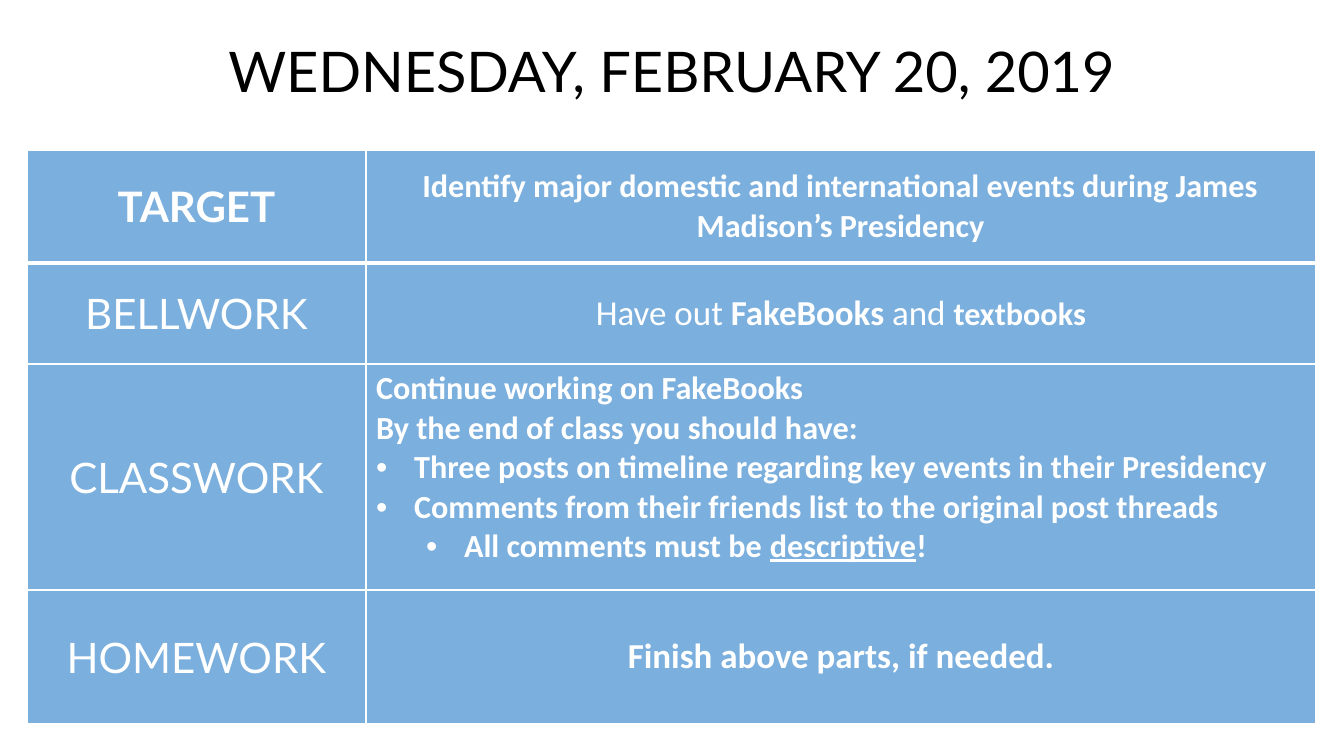
"""Build a daily class agenda slide with a title and a four-row table."""
from lxml.etree import SubElement
from pptx import Presentation
from pptx.dml.color import RGBColor
from pptx.enum.text import MSO_ANCHOR, MSO_AUTO_SIZE, PP_ALIGN
from pptx.oxml.ns import qn
from pptx.util import Pt

HEADING = "WEDNESDAY, FEBRUARY 20, 2019"
BOLD = {"bold": True}
SMALL = {"size": 23, "bold": True}
AGENDA = [
    ("TARGET", 113, [
        [("Identify major domestic and international events during James Madison’s Presidency", SMALL)]]),
    ("BELLWORK", 101, [
        [("Have out ", {}), ("FakeBooks", BOLD), (" and ", {}), ("textbooks", SMALL)]]),
    ("CLASSWORK", 226, [
        [("Continue working on FakeBooks", SMALL)],
        [("By the end of class you should have:", SMALL)],
        [("Three posts on timeline regarding key events in their Presidency", SMALL)],
        [("Comments from their friends list to the original post threads", SMALL)],
        [("All comments must be ", SMALL), ("descriptive", {**SMALL, "underline": True}), ("!", SMALL)]]),
    ("HOMEWORK", 134, [[("Finish above parts, if needed.", BOLD)]]),
]
CLASSWORK_LEVELS = [None, None, 0, 0, 1]
COLUMNS = [339, 950]
LEFT, HEADING_TOP, AGENDA_TOP, HEADING_HEIGHT = 27, 20, 150, 101
HANG, LEVEL_STEP = 38, 50
WHITE, BLACK, BLUE = "FFFFFF", "000000", "5B9BD5"


def px(length):
    return round(length * 914400 / 100.8)


def rgb(color):
    return RGBColor.from_string(color)


def add_text(paragraph, text, font="Calibri", size=25, color=WHITE, bold=False, underline=False):
    run = paragraph.add_run()
    run.text = text
    run.font.name, run.font.size = font, Pt(size)
    run.font.bold, run.font.underline = bold, underline
    run.font.color.rgb = rgb(color)


def fill_clear(owner, color, opacity):
    owner.fill.solid()
    owner.fill.fore_color.rgb = rgb(color)
    properties = owner._tc.tcPr if hasattr(owner, "_tc") else owner._element.spPr
    tint = properties.find(qn("a:solidFill")).find(qn("a:srgbClr"))
    SubElement(tint, qn("a:alpha"), val=str(opacity * 1000))


def add_borders(cell, top, bottom):
    properties = cell._tc.get_or_add_tcPr()
    for side, width in (("L", 1), ("R", 1), ("T", top), ("B", bottom)):
        border = SubElement(properties, qn(f"a:ln{side}"), w=str(Pt(width)))
        SubElement(SubElement(border, qn("a:solidFill")), qn("a:srgbClr"), val=WHITE)


def add_bullet(paragraph, level):
    properties = paragraph._p.get_or_add_pPr()
    properties.set("marL", str(px(HANG + level * LEVEL_STEP)))
    properties.set("indent", str(-px(HANG)))
    SubElement(properties, qn("a:buFont"), typeface="Arial")
    SubElement(properties, qn("a:buChar"), char="•")
    paragraph.level = level


def add_heading(slide):
    heading = slide.shapes.title
    heading.left, heading.top = px(LEFT), px(HEADING_TOP)
    heading.width, heading.height = px(sum(COLUMNS)), px(HEADING_HEIGHT)
    fill_clear(heading, WHITE, 65)
    frame = heading.text_frame
    frame.auto_size, frame.word_wrap = MSO_AUTO_SIZE.NONE, True
    frame.vertical_anchor = MSO_ANCHOR.MIDDLE
    frame.paragraphs[0].alignment = PP_ALIGN.CENTER
    add_text(frame.paragraphs[0], HEADING, font="Lato", size=40, color=BLACK)


def fill_cell(cell, row, paragraphs, levels=None):
    add_borders(cell, 3 if row == 1 else 1, 3 if row == 0 else 1)
    fill_clear(cell, BLUE, 80)
    cell.vertical_anchor = MSO_ANCHOR.TOP if levels else MSO_ANCHOR.MIDDLE
    for index, runs in enumerate(paragraphs):
        frame = cell.text_frame
        paragraph = frame.add_paragraph() if index else frame.paragraphs[0]
        paragraph.alignment = PP_ALIGN.LEFT if levels else PP_ALIGN.CENTER
        if levels and levels[index] is not None:
            add_bullet(paragraph, levels[index])
        for text, style in runs:
            add_text(paragraph, text, **style)


def add_agenda(slide):
    height = sum(row_height for _, row_height, _ in AGENDA)
    agenda = slide.shapes.add_table(
        len(AGENDA), len(COLUMNS), px(LEFT), px(AGENDA_TOP), px(sum(COLUMNS)), px(height)).table
    agenda.first_row = agenda.horz_banding = False
    for column, width in zip(agenda.columns, COLUMNS):
        column.width = px(width)
    for row, (label, row_height, details) in enumerate(AGENDA):
        agenda.rows[row].height = px(row_height)
        label_style = {"font": "Lato", "size": 30, "bold": row == 0}
        fill_cell(agenda.cell(row, 0), row, [[(label, label_style)]])
        levels = CLASSWORK_LEVELS if label == "CLASSWORK" else None
        fill_cell(agenda.cell(row, 1), row, details, levels)


def main():
    deck = Presentation()
    deck.slide_width, deck.slide_height = px(1344), px(756)
    slide = deck.slides.add_slide(deck.slide_layouts[5])
    add_agenda(slide)
    add_heading(slide)
    deck.save("out.pptx")


if __name__ == "__main__":
    main()
